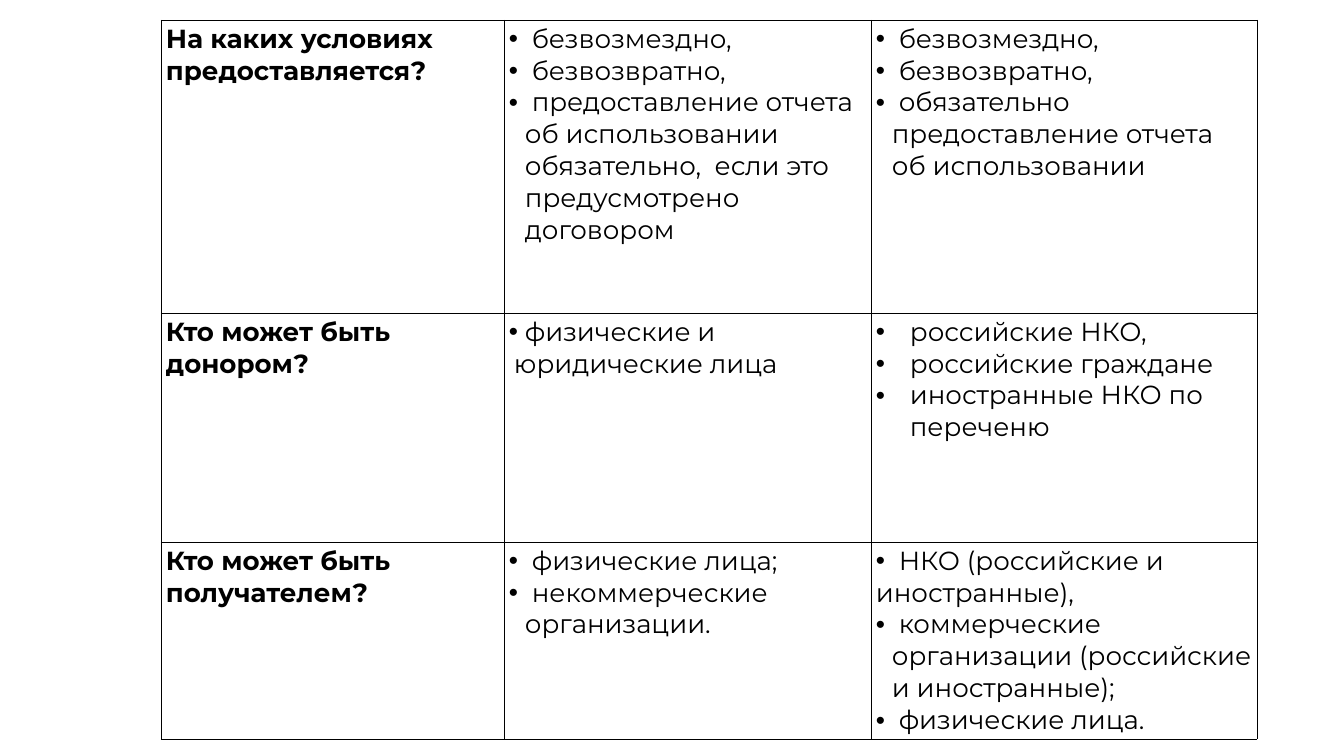
from lxml.etree import SubElement
from pptx import Presentation
from pptx.dml.color import RGBColor
from pptx.oxml.ns import qn
from pptx.util import Emu, Pt

COLORS = {"text": "000000", "border": "000000"}
FONT = "Montserrat"
FONT_SIZE = 28
COLUMNS = [343, 367, 386]
ROWS = [293, 229, 197]
LEFT, TOP = 161, 20
HANG, TIGHT, WIDE = 16, 5, 34


def px(n):
    return Emu(round(n * 914400 / 67.2))


def bullet(text, hang=HANG):
    return {"text": text, "margin": hang, "hang": hang}


def plain(text, margin=0):
    return {"text": text, "margin": margin}


def heading(text):
    return {"text": text, "bold": True}


CELLS = [
    [
        [heading("На каких условиях предоставляется?")],
        [
            bullet(" безвозмездно,"),
            bullet(" безвозвратно,"),
            bullet(" предоставление отчета об использовании обязательно,  если это предусмотрено договором"),
        ],
        [
            bullet(" безвозмездно,"),
            bullet(" безвозвратно,"),
            bullet(" обязательно предоставление отчета об использовании"),
        ],
    ],
    [
        [heading("Кто может быть донором?")],
        [bullet(" физические и", TIGHT), plain("юридические лица", TIGHT)],
        [
            bullet("российские НКО,", WIDE),
            bullet("российские граждане", WIDE),
            bullet("иностранные НКО по переченю", WIDE),
        ],
    ],
    [
        [heading("Кто может быть получателем?")],
        [bullet(" физические лица;"), bullet(" некоммерческие организации.")],
        [
            bullet(" НКО (российские и"),
            plain("иностранные),"),
            bullet(" коммерческие организации (российские и иностранные);"),
            bullet(" физические лица."),
        ],
    ],
]


def add_color(parent, color):
    SubElement(parent, qn("a:srgbClr"), val=COLORS[color])


def write_paragraph(p, text, bold=False, margin=0, hang=0):
    pPr = p._p.get_or_add_pPr()
    pPr.set("marL", str(px(margin)))
    pPr.set("indent", str(-px(hang)))
    if hang:
        add_color(SubElement(pPr, qn("a:buClr")), "text")
        SubElement(pPr, qn("a:buFont"), typeface="Arial")
        SubElement(pPr, qn("a:buChar"), char="•")
    else:
        SubElement(pPr, qn("a:buNone"))
    r = p.add_run()
    r.text = text
    r.font.name = FONT
    r.font.size = Pt(FONT_SIZE)
    r.font.bold = bold
    r.font.color.rgb = RGBColor.from_string(COLORS["text"])


def format_cell(cell):
    cell.margin_left = cell.margin_right = px(5)
    cell.margin_top = cell.margin_bottom = px(3)
    tcPr = cell._tc.get_or_add_tcPr()
    for side in ("lnL", "lnR", "lnT", "lnB"):
        ln = SubElement(tcPr, qn(f"a:{side}"), w=str(Pt(0.5)))
        add_color(SubElement(ln, qn("a:solidFill")), "border")
    cell.fill.background()


def fill_cell(cell, paragraphs):
    format_cell(cell)
    tf = cell.text_frame
    for i, paragraph in enumerate(paragraphs):
        p = tf.add_paragraph() if i else tf.paragraphs[0]
        write_paragraph(p, **paragraph)


def add_comparison_table(slide):
    frame = slide.shapes.add_table(
        len(ROWS), len(COLUMNS), px(LEFT), px(TOP), px(sum(COLUMNS)), px(sum(ROWS))
    )
    table = frame.table
    table.first_row = False
    table.horz_banding = False
    for column, width in zip(table.columns, COLUMNS):
        column.width = px(width)
    for row, height, contents in zip(table.rows, ROWS, CELLS):
        row.height = px(height)
        for cell, paragraphs in zip(row.cells, contents):
            fill_cell(cell, paragraphs)


def main():
    prs = Presentation()
    prs.slide_width, prs.slide_height = px(1344), px(756)
    slide = prs.slides.add_slide(prs.slide_layouts[6])
    add_comparison_table(slide)
    prs.save("out.pptx")


if __name__ == "__main__":
    main()
